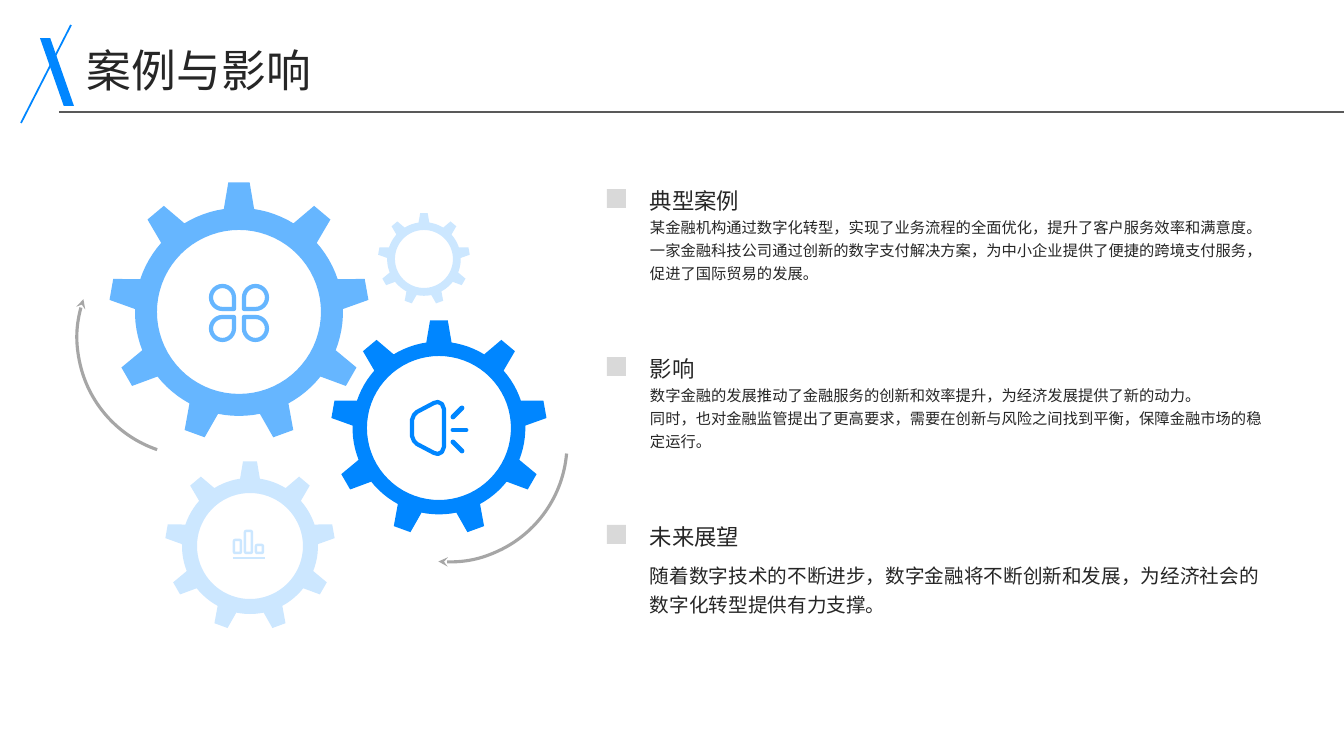
import math
import pptx
import pptx.util
import pptx.dml.color
import pptx.enum.shapes
import pptx.enum.text
import pptx.oxml.ns
from lxml import etree

PX = 12192000 / 1344
FONT = "Noto Sans CJK SC"
DARK, GREY, SQUARE = "262626", "A6A6A6", "D9D9D9"
BLUE, MID, PALE = "0086FF", "66B6FF", "CCE7FF"
SHAPE = pptx.enum.shapes.MSO_SHAPE
ANCHOR = pptx.enum.text.MSO_ANCHOR
qn = pptx.oxml.ns.qn


def emu(*lengths):
    return [pptx.util.Emu(round(v * PX)) for v in lengths]


def paint(fill, colour):
    fill.solid()
    fill.fore_color.rgb = pptx.dml.color.RGBColor.from_string(colour)


prs = pptx.Presentation()
prs.slide_width, prs.slide_height = emu(1344, 756)
s = prs.slides.add_slide(prs.slide_layouts[5])
solid, outlined = [], []  # (shape, colour) and (shape, colour, points)

# Gears: nine tapered teeth around a ring
gears = [  # centre x, centre y, tip radius, hole radius, colour
    (239, 312, 130, 82, MID),
    (250, 546, 85, 53, PALE),
    (424, 259, 46, 29, PALE),
    (439, 428, 108, 72, BLUE),
]
for cx, cy, tip, hole, colour in gears:
    outline = []
    for tooth in range(0, 360, 40):
        outline += [(tooth - 8.4, 0.8 * tip), (tooth - 4.7, tip),
                    (tooth + 4.7, tip), (tooth + 8.4, 0.8 * tip)]
        outline += [(tooth + a, 0.8 * tip) for a in range(12, 30, 4)]
    ring = [(a, hole) for a in range(0, 360, 5)]
    contours = [[emu(cx + r * math.sin(math.radians(a)), cy - r * math.cos(math.radians(a)))
                 for a, r in polar] for polar in (outline, ring)]
    builder = s.shapes.build_freeform(*contours[0][0])
    builder.add_line_segments(contours[0][1:])
    builder.move_to(*contours[1][0])
    builder.add_line_segments(contours[1][1:])
    solid.append((builder.convert_to_shape(), colour))

# Curved arrows
for x, y, angle in [(77, 219, 198.9), (330, 325, 94.9)]:
    arc = s.shapes.add_shape(SHAPE.ARC, *emu(x, y, 237, 237))
    arc.rotation = angle
    outlined.append((arc, GREY, 2.25))

# Clover icon: four petals pointing at the centre
for col, row, angle in [(0, 0, 90), (1, 0, 180), (0, 1, 0), (1, 1, 270)]:
    petal = s.shapes.add_shape(SHAPE.TEAR, *emu(211 + 33 * col, 286 + 31 * row, 23, 23))
    petal.rotation = angle
    outlined.append((petal, MID, 3))

# Speaker icon: horn and three rays
upper = [(412, 420), (414, 415), (417, 412), (434, 403), (438, 402), (442, 404), (444, 409)]
horn = [emu(*pt) for pt in upper + [(x, 856 - y) for x, y in reversed(upper)]]
builder = s.shapes.build_freeform(*horn[0])
builder.add_line_segments(horn[1:])
outlined.append((builder.convert_to_shape(), BLUE, 3))
rays = []
for ends in [(453, 417, 462, 408), (453, 430, 466, 430), (453, 442, 462, 451)]:
    ray = s.shapes.add_connector(pptx.enum.shapes.MSO_CONNECTOR.STRAIGHT, *emu(*ends))
    rays.append(ray)
    outlined.append((ray, BLUE, 3.5))

# Bar icon
for i, top in enumerate([540, 531, 545]):
    bar = s.shapes.add_shape(SHAPE.ROUNDED_RECTANGLE, *emu(234 + 11 * i, top, 7, 553 - top))
    outlined.append((bar, PALE, 1.75))

# Title mark, title rule and icon baseline
slash = s.shapes.add_shape(SHAPE.PARALLELOGRAM, *emu(40, 38, 34, 68))
slash.adjustments[0] = 0.7
slash._element.spPr.find(qn("a:xfrm")).set("flipH", "1")
solid.append((slash, BLUE))
for ends, colour, points in [((71, 25, 21, 123), BLUE, 1.25),
                             ((59, 112, 1344, 112), "595959", 0.75),
                             ((233, 558, 265, 558), PALE, 2)]:
    line = s.shapes.add_connector(pptx.enum.shapes.MSO_CONNECTOR.STRAIGHT, *emu(*ends))
    outlined.append((line, colour, points))

# Texts: frame, wording, size, line spacing, anchor
title = s.shapes.title
title.left, title.top, title.width, title.height = emu(87, 44, 1183, 48)
texts = [(title, "案例与影响", 32, 1.05, ANCHOR.MIDDLE)]
sections = [
    ("典型案例", "某金融机构通过数字化转型，实现了业务流程的全面优化，提升了客户服务效率和满意度。\n"
     "一家金融科技公司通过创新的数字支付解决方案，为中小企业提供了便捷的跨境支付服务，促进了国际贸易的发展。", 10.9, 35),
    ("影响", "数字金融的发展推动了金融服务的创新和效率提升，为经济发展提供了新的动力。\n"
     "同时，也对金融监管提出了更高要求，需要在创新与风险之间找到平衡，保障金融市场的稳定运行。", 10.9, 35),
    ("未来展望", "随着数字技术的不断进步，数字金融将不断创新和发展，为经济社会的数字化转型提供有力支撑。", 14, 43),
]
for i, (heading, body, size, drop) in enumerate(sections):
    top = 179 + 168 * i
    solid.append((s.shapes.add_shape(SHAPE.RECTANGLE, *emu(607, top + 10, 19, 19)), SQUARE))
    box = s.shapes.add_textbox(*emu(650, top, 620, 35))
    texts.append((box, heading, 16, 1.3, ANCHOR.BOTTOM))
    box = s.shapes.add_textbox(*emu(650, top + drop, 620, 111))
    texts.append((box, body, size, 1.25, ANCHOR.TOP))

for box, words, size, spacing, anchor in texts:
    tf = box.text_frame
    tf.text = words
    tf.word_wrap = True
    tf.auto_size = pptx.enum.text.MSO_AUTO_SIZE.NONE
    tf.vertical_anchor = anchor
    tf.margin_left = tf.margin_right = tf.margin_top = tf.margin_bottom = 0
    for p in tf.paragraphs:
        p.alignment = pptx.enum.text.PP_ALIGN.LEFT
        p.line_spacing = spacing
        for r in p.runs:
            r.font.size = pptx.util.Pt(size)
            r.font.name = FONT
            paint(r.font.fill, DARK)
            etree.SubElement(r._r.get_or_add_rPr(), qn("a:ea")).set("typeface", FONT)

# Fills, lines, arrowheads and no shadows
for shape, colour in solid:
    paint(shape.fill, colour)
    shape.line.fill.background()
    shape.shadow.inherit = False
for shape, colour, points in outlined:
    paint(shape.line.fill, colour)
    shape.line.width = pptx.util.Pt(points)
    spPr = shape._element.spPr
    ln = spPr.find(qn("a:ln"))
    if shape in rays:
        ln.set("cap", "rnd")
    if colour == GREY:
        etree.SubElement(ln, qn("a:tailEnd")).set("type", "stealth")
    if hasattr(shape, "fill"):
        shape.fill.background()
    etree.SubElement(spPr, qn("a:effectLst"))

prs.save("out.pptx")
